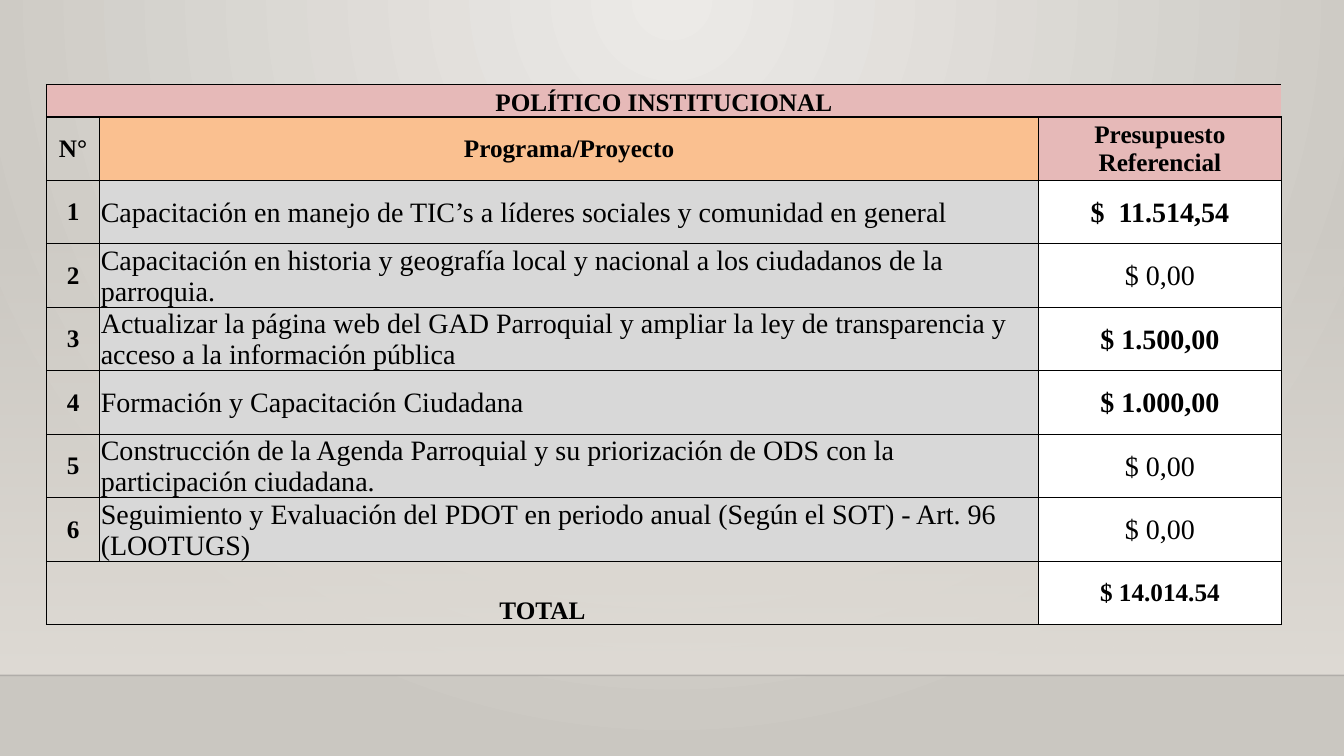
from dataclasses import dataclass

import lxml.etree
import pptx
import pptx.dml.color
import pptx.enum.shapes
import pptx.enum.text
import pptx.oxml
import pptx.oxml.ns
import pptx.util

Inches = pptx.util.Inches
CENTER = pptx.enum.text.PP_ALIGN.CENTER
LEFT = pptx.enum.text.PP_ALIGN.LEFT
MIDDLE = pptx.enum.text.MSO_ANCHOR.MIDDLE
BOTTOM = pptx.enum.text.MSO_ANCHOR.BOTTOM

SLIDE_WIDTH, SLIDE_HEIGHT, FLOOR_TOP = 13.33, 7.5, 6.7
COLUMN_WIDTHS = (0.53, 9.31, 2.41)
TITLE_HEIGHT, ROW_HEIGHT = 0.32, 0.63
PROJECTS = [
    ("Capacitación en manejo de TIC’s a líderes sociales y comunidad en general", "$  11.514,54"),
    ("Capacitación en historia y geografía local y nacional a los ciudadanos de la parroquia.", "$ 0,00"),
    ("Actualizar la página web del GAD Parroquial y ampliar la ley de transparencia y "
     "acceso a la información pública", "$ 1.500,00"),
    ("Formación y Capacitación Ciudadana", "$ 1.000,00"),
    ("Construcción de la Agenda Parroquial y su priorización de ODS con la "
     "participación ciudadana.", "$ 0,00"),
    ("Seguimiento y Evaluación del PDOT en periodo anual (Según el SOT) - Art. 96 (LOOTUGS)", "$ 0,00"),
]


@dataclass(frozen=True)
class Theme:
    font: str = "Times New Roman"
    label_size: int = 18
    project_size: int = 20
    ink: str = "000000"
    pink: str = "E6B9B8"
    orange: str = "FAC090"
    gray: str = "D8D8D8"
    white: str = "FFFFFF"
    wall_light: str = "ECEAE7"
    wall_dark: str = "CAC7C1"
    haze: str = "DFDBD5"
    floor_line: str = "000001"


def color(value):
    return pptx.dml.color.RGBColor.from_string(value)


def add_xml(parent, text):
    """Append DrawingML to parent; the text uses the a: prefix."""
    wrapper = pptx.oxml.parse_xml(f'<a:x {pptx.oxml.ns.nsdecls("a")}>{text}</a:x>')
    for element in list(wrapper):
        parent.append(element)


def set_gradient(owner, stops, direction):
    """Replace the stops and direction of the gradient fill inside owner."""
    gradient = next(owner.iter(pptx.oxml.ns.qn("a:gradFill")))
    for element in list(gradient):
        gradient.remove(element)
    stop_xml = "".join(
        f'<a:gs pos="{position * 1000}"><a:srgbClr val="{value}">'
        f'<a:alpha val="{opacity * 1000}"/></a:srgbClr></a:gs>'
        for position, value, opacity in stops)
    add_xml(gradient, f"<a:gsLst>{stop_xml}</a:gsLst>{direction}")


class SlideBuilder:
    def __init__(self, slide, theme):
        self.slide = slide
        self.theme = theme

    def background(self):
        self.slide.background.fill.gradient()
        set_gradient(
            self.slide.element,
            [(0, self.theme.wall_light, 100), (100, self.theme.wall_dark, 100)],
            '<a:path path="circle"><a:fillToRect l="43000" t="0" r="43000" b="100000"/></a:path>')

    def haze(self, top, bottom):
        shape = self.slide.shapes.add_shape(
            pptx.enum.shapes.MSO_SHAPE.RECTANGLE,
            Inches(0), Inches(top), Inches(SLIDE_WIDTH), Inches(bottom - top))
        shape.shadow.inherit = False
        shape.line.fill.background()
        shape.fill.gradient()
        set_gradient(shape.element, [(0, self.theme.haze, 0), (100, self.theme.haze, 100)],
                     '<a:lin ang="5400000" scaled="0"/>')

    def floor_line(self, top):
        line = self.slide.shapes.add_connector(
            pptx.enum.shapes.MSO_CONNECTOR.STRAIGHT,
            Inches(0), Inches(top), Inches(SLIDE_WIDTH), Inches(top))
        line.line.width = pptx.util.Pt(1)
        line.line.color.rgb = color(self.theme.floor_line)
        add_xml(next(line.element.iter(pptx.oxml.ns.qn("a:srgbClr"))), '<a:alpha val="20000"/>')
        add_xml(line.element.spPr, "<a:effectLst/>")

    def table(self, left, top, row_heights):
        frame = self.slide.shapes.add_table(
            len(row_heights), len(COLUMN_WIDTHS), Inches(left), Inches(top),
            Inches(sum(COLUMN_WIDTHS)), Inches(sum(row_heights)))
        table = frame.table
        table.first_row = table.horz_banding = False
        for column, width in zip(table.columns, COLUMN_WIDTHS):
            column.width = Inches(width)
        for row, height in zip(table.rows, row_heights):
            row.height = Inches(height)
        for cell in table.iter_cells():
            self.borders(cell, "LRTB")
            cell.fill.background()
        return table

    def borders(self, cell, visible):
        properties = cell._tc.get_or_add_tcPr()
        for side in "LRTB":
            for old in properties.findall(pptx.oxml.ns.qn(f"a:ln{side}")):
                properties.remove(old)
        paint = f'<a:solidFill><a:srgbClr val="{self.theme.ink}"/></a:solidFill>'
        for index, side in enumerate("LRTB"):
            fill = paint if side in visible else "<a:noFill/>"
            add_xml(properties, f'<a:ln{side} w="12700">{fill}</a:ln{side}>')
            properties.insert(index, properties[-1])

    def cell(self, cell, text, fill=None, size=None, bold=True, align=CENTER, anchor=MIDDLE, inset=0):
        cell.margin_left = cell.margin_right = cell.margin_top = Inches(inset)
        cell.margin_bottom = Inches(0)
        cell.vertical_anchor = anchor
        if fill:
            cell.fill.solid()
            cell.fill.fore_color.rgb = color(fill)
        paragraph = cell.text_frame.paragraphs[0]
        paragraph.text = text
        paragraph.alignment = align
        font = paragraph.runs[0].font
        font.name = self.theme.font
        font.size = pptx.util.Pt(size or self.theme.label_size)
        font.bold = bold
        font.color.rgb = color(self.theme.ink)


def main():
    presentation = pptx.Presentation()
    presentation.slide_width = Inches(SLIDE_WIDTH)
    presentation.slide_height = Inches(SLIDE_HEIGHT)
    theme = Theme()
    builder = SlideBuilder(presentation.slides.add_slide(presentation.slide_layouts[6]), theme)
    builder.background()
    builder.haze(2.21, FLOOR_TOP)
    builder.floor_line(FLOOR_TOP)

    total_row = len(PROJECTS) + 2
    table = builder.table(0.46, 0.84, [TITLE_HEIGHT] + [ROW_HEIGHT] * total_row)
    table.cell(0, 0).merge(table.cell(0, 2))
    for column in range(len(COLUMN_WIDTHS)):
        builder.borders(table.cell(0, column), "LTB" if column == 0 else "TB")
    builder.cell(table.cell(0, 0), "POLÍTICO INSTITUCIONAL", theme.pink, anchor=BOTTOM)

    headers = [("N°", None), ("Programa/Proyecto", theme.orange),
               ("Presupuesto Referencial", theme.pink)]
    for column, (text, fill) in enumerate(headers):
        builder.cell(table.cell(1, column), text, fill)

    for number, (project, budget) in enumerate(PROJECTS, start=1):
        row = number + 1
        builder.cell(table.cell(row, 0), str(number))
        builder.cell(table.cell(row, 1), project, theme.gray, theme.project_size,
                     bold=False, align=LEFT, inset=0.01)
        builder.cell(table.cell(row, 2), budget, theme.white, theme.project_size,
                     bold=budget != "$ 0,00", inset=0.01)

    table.cell(total_row, 0).merge(table.cell(total_row, 1))
    builder.cell(table.cell(total_row, 0), "TOTAL", anchor=BOTTOM)
    builder.cell(table.cell(total_row, 2), "$ 14.014.54", theme.white)
    presentation.save("out.pptx")


if __name__ == "__main__":
    main()
